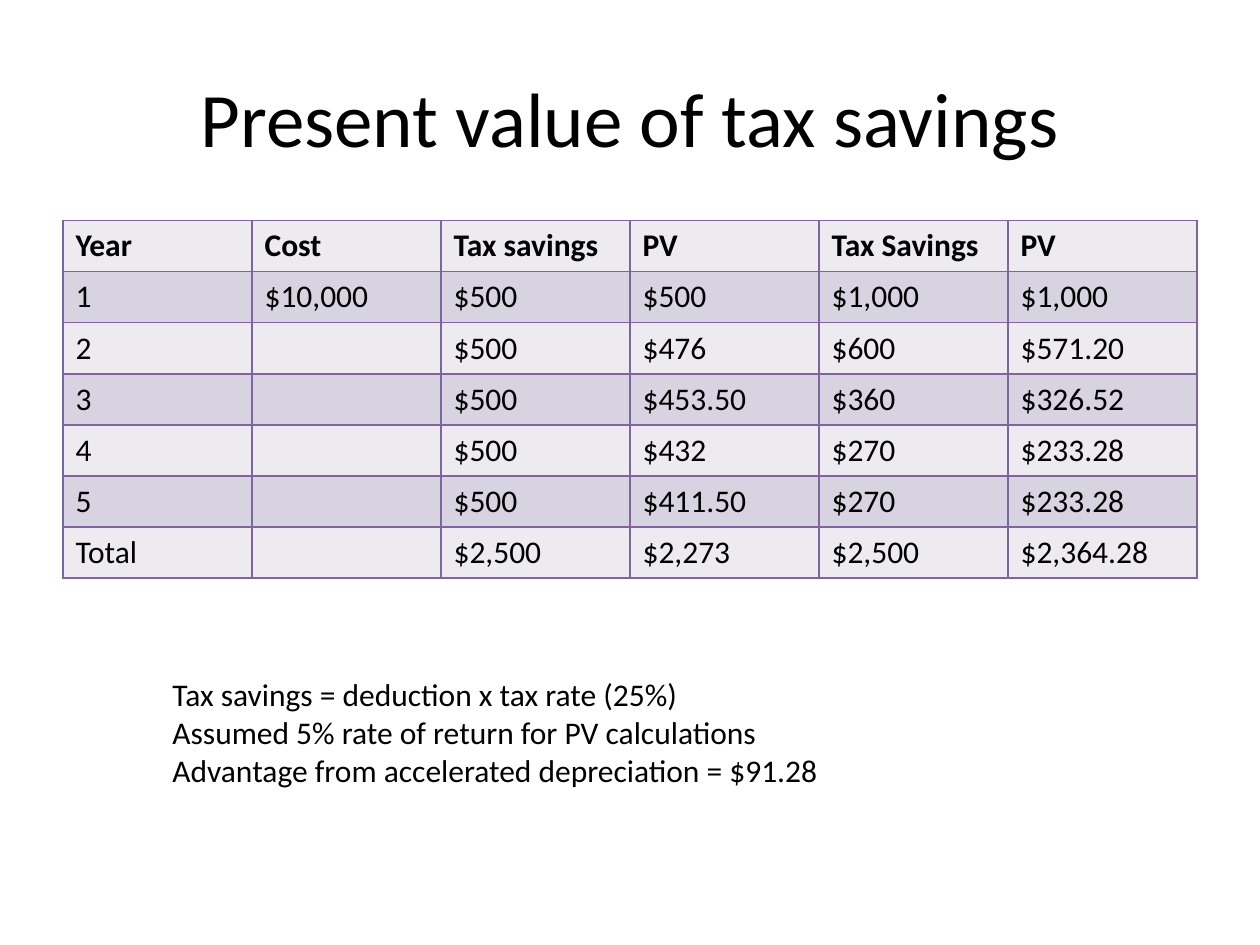
from lxml.etree import SubElement
from pptx import Presentation
from pptx.dml.color import RGBColor
from pptx.enum.text import MSO_ANCHOR, MSO_AUTO_SIZE, PP_ALIGN
from pptx.oxml.ns import qn
from pptx.util import Inches, Pt

TITLE = "Present value of tax savings"
SAVINGS = [
    ("Year", "Cost", "Tax savings", "PV", "Tax Savings", "PV"),
    ("1", "$10,000", "$500", "$500", "$1,000", "$1,000"),
    ("2", "", "$500", "$476", "$600", "$571.20"),
    ("3", "", "$500", "$453.50", "$360", "$326.52"),
    ("4", "", "$500", "$432", "$270", "$233.28"),
    ("5", "", "$500", "$411.50", "$270", "$233.28"),
    ("Total", "", "$2,500", "$2,273", "$2,500", "$2,364.28"),
]
ASSUMPTIONS = [
    "Tax savings = deduction x tax rate (25%)",
    "Assumed 5% rate of return for PV calculations",
    "Advantage from accelerated depreciation = $91.28",
]
BANDS = ("EDEAF0", "D8D3E0")
BORDER, INK = "8064A2", "000000"
TITLE_BOX = (0.5, 0.3, 9, 1.25)
TABLE_BOX = (0.5, 1.75, 9, 2.84)
ASSUMPTIONS_BOX = (1.27, 5.31, 5.41, 1.01)


def paint(color_format, color):
    color_format.rgb = RGBColor.from_string(color)


def write(paragraph, text, size=18, bold=False):
    paragraph.text = text
    for name, value in {"name": "Calibri", "size": Pt(size), "bold": bold}.items():
        setattr(paragraph.font, name, value)
        for run in paragraph.runs:
            setattr(run.font, name, value)
    for run in paragraph.runs:
        paint(run.font.color, INK)


def outline(cell):
    properties = cell._tc.get_or_add_tcPr()
    for side in ("L", "R", "T", "B"):
        line = SubElement(properties, qn(f"a:ln{side}"), w=str(Pt(1)))
        SubElement(SubElement(line, qn("a:solidFill")), qn("a:srgbClr"), val=BORDER)


def add_title(slide):
    title = slide.shapes.title
    title.left, title.top, title.width, title.height = map(Inches, TITLE_BOX)
    title.text_frame.vertical_anchor = MSO_ANCHOR.MIDDLE
    heading = title.text_frame.paragraphs[0]
    write(heading, TITLE, 44)
    heading.alignment = PP_ALIGN.CENTER


def add_savings(slide):
    frame = slide.shapes.add_table(len(SAVINGS), len(SAVINGS[0]), *map(Inches, TABLE_BOX))
    for r, values in enumerate(SAVINGS):
        for c, value in enumerate(values):
            cell = frame.table.cell(r, c)
            write(cell.text_frame.paragraphs[0], value, bold=r == 0)
            outline(cell)
            cell.fill.solid()
            paint(cell.fill.fore_color, BANDS[r % 2])


def add_assumptions(slide):
    notes = slide.shapes.add_textbox(*map(Inches, ASSUMPTIONS_BOX)).text_frame
    notes.word_wrap = False
    notes.auto_size = MSO_AUTO_SIZE.SHAPE_TO_FIT_TEXT
    for i, assumption in enumerate(ASSUMPTIONS):
        write(notes.add_paragraph() if i else notes.paragraphs[0], assumption)


def main():
    """Build the slide on the present value of tax savings."""
    deck = Presentation()
    deck.slide_width, deck.slide_height = Inches(10), Inches(7.5)
    slide = deck.slides.add_slide(deck.slide_layouts[5])
    add_title(slide)
    add_savings(slide)
    add_assumptions(slide)
    deck.save("out.pptx")


if __name__ == "__main__":
    main()
